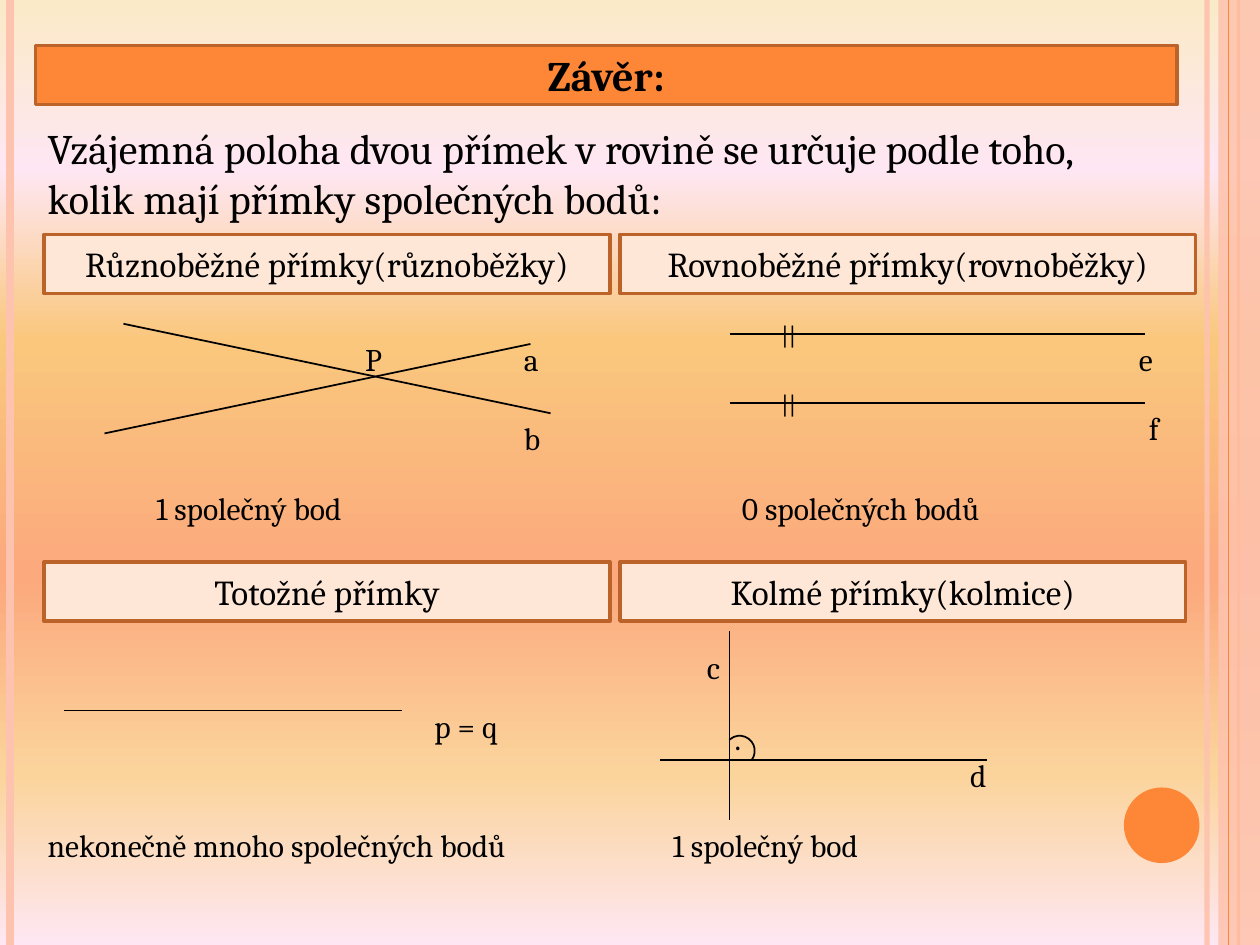
"""Build the summary slide on the mutual position of two lines."""
from lxml import etree
from pptx import Presentation
from pptx.dml.color import RGBColor
from pptx.enum.shapes import MSO_CONNECTOR as CONN, MSO_SHAPE as SHAPE
from pptx.enum.text import MSO_ANCHOR as ANCHOR, MSO_AUTO_SIZE as FIT, PP_ALIGN as ALIGN
from pptx.oxml.ns import qn
from pptx.util import Inches, Pt

FONT = "Cambria"
BLACK = RGBColor(0x00, 0x00, 0x00)
ORANGE = RGBColor(0xFE, 0x86, 0x37)
BROWN = RGBColor(0xBC, 0x63, 0x29)
PEACH = RGBColor(0xFF, 0xE7, 0xD7)
SALMON = RGBColor(0xFE, 0xC3, 0xAE)
GRADIENT = [
    (0, RGBColor(0xFB, 0xEA, 0xC7)),
    (18, RGBColor(0xFE, 0xE7, 0xF2)),
    (36, RGBColor(0xFA, 0xC7, 0x7D)),
    (61, RGBColor(0xFB, 0xA9, 0x7D)),
    (82, RGBColor(0xFB, 0xD4, 0x9C)),
    (100, RGBColor(0xFE, 0xE7, 0xF2)),
]

LEFT, RIGHT = 0.35, 4.92
TOP_ROW, BOTTOM_ROW = 1.86, 4.46
BAR_W, BAR_H = 4.49, 0.47


def set_alpha(element, percent):
    """Make the colour inside an element partly transparent."""
    color = next(element.iter(qn("a:srgbClr")))
    etree.SubElement(color, qn("a:alpha"), val=str(percent * 1000))


def paint_background(s):
    """Fill the slide with the vertical gradient."""
    fill = s.background.fill
    fill.gradient()
    fill.gradient_angle = 270
    stops = next(s.background._cSld.iter(qn("a:gsLst")))
    for stop in list(stops):
        stops.remove(stop)
    for pos, color in GRADIENT:
        stop = etree.SubElement(stops, qn("a:gs"), pos=str(pos * 1000))
        etree.SubElement(stop, qn("a:srgbClr"), val=str(color))


def add_line(s, x1, y1, x2, y2, color=BLACK, width=1):
    """Draw a straight line without a shadow."""
    line = s.shapes.add_connector(CONN.STRAIGHT, Inches(x1), Inches(y1), Inches(x2), Inches(y2))
    line.line.color.rgb = color
    line.line.width = Pt(width)
    etree.SubElement(line._element.spPr, qn("a:effectLst"))
    return line


def add_shape(s, kind, x, y, w, h, color):
    """Draw a flat filled shape without an outline."""
    sp = s.shapes.add_shape(kind, Inches(x), Inches(y), Inches(w), Inches(h))
    sp.shadow.inherit = False
    sp.fill.solid()
    sp.fill.fore_color.rgb = color
    sp.line.fill.background()
    return sp


def set_text(sp, text, size, bold=False):
    """Put one formatted paragraph into a shape."""
    tf = sp.text_frame
    tf.text = text
    tf.word_wrap = True
    p = tf.paragraphs[0]
    font = p.runs[0].font
    font.name, font.size, font.bold = FONT, Pt(size), bold
    font.color.rgb = BLACK
    return p


def add_label(s, text, x, y, w, h=0.4, size=18):
    """Add a left-aligned text box."""
    sp = s.shapes.add_textbox(Inches(x), Inches(y), Inches(w), Inches(h))
    set_text(sp, text, size)


def style_bar(sp, text, size, bold=False):
    """Give a bar its outline and centred caption."""
    sp.line.color.rgb = BROWN
    sp.line.width = Pt(2)
    set_text(sp, text, size, bold).alignment = ALIGN.CENTER
    sp.text_frame.vertical_anchor = ANCHOR.MIDDLE
    sp.text_frame.auto_size = FIT.NONE


def add_bar(s, text, x, y, w=BAR_W):
    """Add the heading bar of one case."""
    style_bar(add_shape(s, SHAPE.RECTANGLE, x, y, w, BAR_H, PEACH), text, 20)


def add_title(s, text):
    """Format the title placeholder as the main bar."""
    title = s.shapes.title
    title.left, title.top = Inches(0.28), Inches(0.36)
    title.width, title.height = Inches(9.06), Inches(BAR_H)
    title.fill.solid()
    title.fill.fore_color.rgb = ORANGE
    style_bar(title, text, 24, bold=True)


def add_decoration(s):
    """Draw the stripes at the edges and the disc."""
    edge = add_line(s, 9.58, 0, 9.58, 7.5, SALMON, 3)
    set_alpha(edge._element.spPr, 93)
    add_line(s, 0.08, 0, 0.08, 7.5, SALMON, 4.5)
    add_line(s, 9.83, 0, 9.83, 7.5, ORANGE, 1.5)
    band = add_shape(s, SHAPE.RECTANGLE, 9.67, 0, 0.33, 7.5, SALMON)
    set_alpha(band._element.spPr, 87)
    add_line(s, 9.75, 0, 9.75, 7.5, ORANGE, 0.75)
    add_shape(s, SHAPE.OVAL, 8.92, 6.25, 0.6, 0.6, ORANGE)


def add_intersecting(s):
    """Show two lines crossing at a point."""
    add_bar(s, "Různoběžné přímky(různoběžky)", LEFT, TOP_ROW)
    add_line(s, 0.83, 3.44, 4.21, 2.73)
    add_line(s, 0.98, 2.57, 4.37, 3.28)
    add_label(s, "a", 4.06, 2.65, 0.24)
    add_label(s, "b", 4.06, 3.28, 0.47)
    add_label(s, "P", 2.8, 2.65, 0.31)
    add_label(s, "1 společný bod", 1.14, 3.83, 3.39)


def add_parallel(s):
    """Show two parallel lines with their marks."""
    add_bar(s, "Rovnoběžné přímky(rovnoběžky)", RIGHT, TOP_ROW, 4.57)
    for name, x, y in (("e", 8.94, 2.65), ("f", 9.02, 3.2)):
        add_line(s, 5.79, y, 9.09, y)
        add_label(s, "||", 6.1, y - 0.16, 1.02, 0.34, 14)
        add_label(s, name, x, y, 0.39)
    add_label(s, "0 společných bodů", 5.79, 3.83, 3.39)


def add_identical(s):
    """Show two lines that coincide."""
    add_bar(s, "Totožné přímky", LEFT, BOTTOM_ROW)
    add_line(s, 0.51, 5.64, 3.19, 5.64)
    add_label(s, "p = q", 3.35, 5.56, 1.73)
    add_label(s, "nekonečně mnoho společných bodů", 0.28, 6.51, 4.25)


def add_perpendicular(s):
    """Show two lines meeting at a right angle."""
    add_bar(s, "Kolmé přímky(kolmice)", RIGHT, BOTTOM_ROW)
    add_line(s, 5.79, 5.01, 5.79, 6.51)
    add_line(s, 5.24, 6.03, 7.83, 6.03)
    arc = add_shape(s, SHAPE.ARC, 5.75, 5.84, 0.24, 0.24, BLACK)
    arc.fill.background()
    arc.line.color.rgb = BLACK
    arc.line.width = Pt(1)
    arc.rotation = 37.3
    arc.adjustments[0], arc.adjustments[1] = 113.7, 0
    add_label(s, ".", 5.77, 5.66, 0.16)
    add_label(s, "d", 7.6, 5.95, 0.39)
    add_label(s, "c", 5.55, 5.09, 0.16)
    add_label(s, "1 společný bod", 5.24, 6.51, 3.07)


def main():
    """Build and save the presentation."""
    prs = Presentation()
    prs.slide_width, prs.slide_height = Inches(10), Inches(7.5)
    s = prs.slides.add_slide(prs.slide_layouts[5])
    paint_background(s)
    add_decoration(s)
    add_title(s, "Závěr:")
    intro = "Vzájemná poloha dvou přímek v rovině se určuje podle toho, kolik mají přímky společných bodů:"
    add_label(s, intro, 0.28, 0.92, 9.06, 0.91, 24)
    add_intersecting(s)
    add_parallel(s)
    add_identical(s)
    add_perpendicular(s)
    prs.save("out.pptx")


if __name__ == "__main__":
    main()
